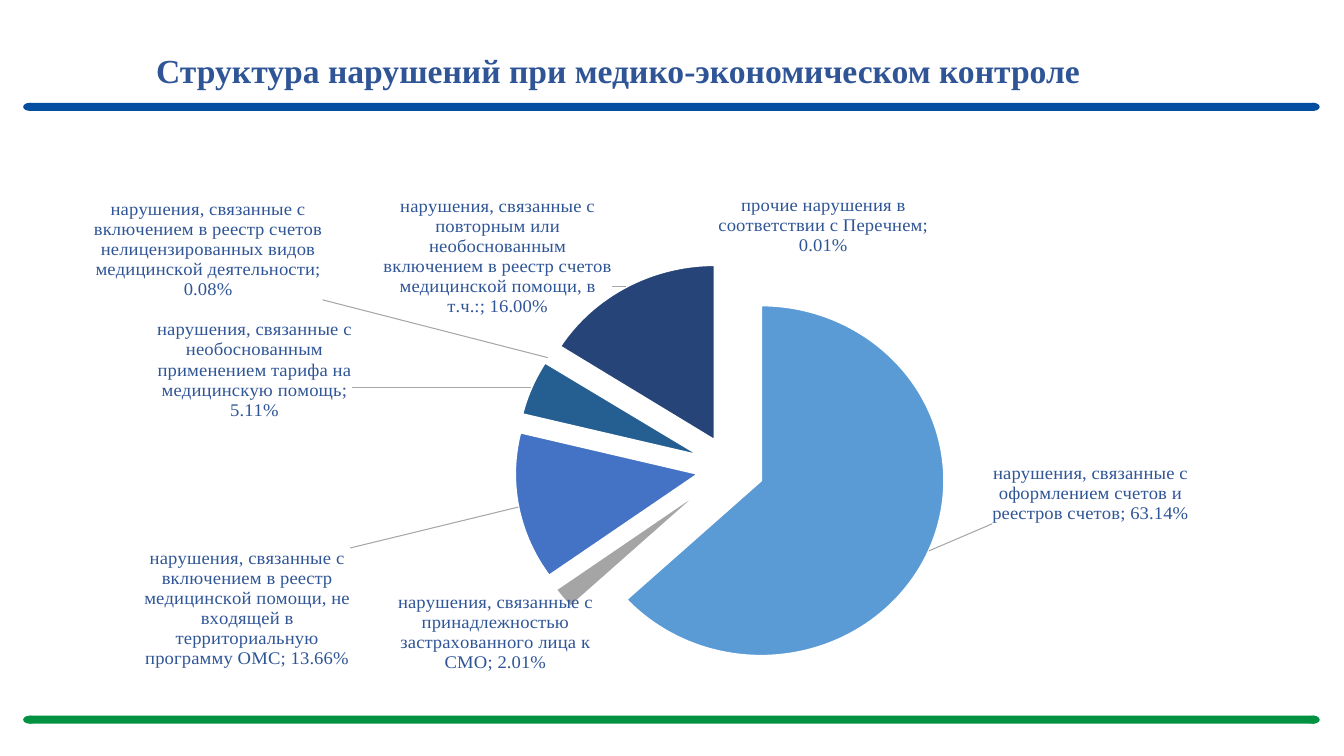
from dataclasses import dataclass

from lxml import etree
from pptx import Presentation
from pptx.chart.chart import Chart
from pptx.chart.data import CategoryChartData
from pptx.dml.color import RGBColor
from pptx.enum.chart import XL_CHART_TYPE, XL_LABEL_POSITION
from pptx.enum.shapes import MSO_SHAPE
from pptx.enum.text import MSO_ANCHOR, PP_ALIGN
from pptx.oxml import parse_xml
from pptx.oxml.ns import nsdecls, qn
from pptx.slide import Slide
from pptx.util import Inches, Pt

PIE = XL_CHART_TYPE.PIE
OUTSIDE_END = XL_LABEL_POSITION.OUTSIDE_END
RECTANGLE = MSO_SHAPE.RECTANGLE
OVAL = MSO_SHAPE.OVAL
BOTTOM = MSO_ANCHOR.BOTTOM
CENTER = PP_ALIGN.CENTER

WHITE = RGBColor(0xFF, 0xFF, 0xFF)
BLACK = RGBColor(0x00, 0x00, 0x00)
TEXT_BLUE = RGBColor(0x2F, 0x55, 0x97)
RULE_BLUE = RGBColor(0x03, 0x4E, 0xA1)
RULE_GREEN = RGBColor(0x00, 0x92, 0x40)
LEADER_GRAY = RGBColor(0xA6, 0xA6, 0xA6)
SERIF = "Times New Roman"
EXPLOSION = 18


@dataclass
class Violation:
    """One slice; label_x and label_y shift its label by fractions of the chart."""

    name: str
    share: float
    color: RGBColor
    label_x: float
    label_y: float


VIOLATIONS = [
    Violation("нарушения, связанные с оформлением счетов и реестров счетов",
              0.6314, RGBColor(0x5B, 0x9B, 0xD5), 0.05, -0.18),
    Violation("нарушения, связанные с принадлежностью застрахованного лица к СМО",
              0.0201, RGBColor(0xA5, 0xA5, 0xA5), 0.03, -0.02),
    Violation("нарушения, связанные с включением в реестр медицинской помощи, "
              "не входящей в территориальную программу ОМС",
              0.1366, RGBColor(0x44, 0x72, 0xC4), -0.14, 0.08),
    Violation("нарушения, связанные с необоснованным применением тарифа "
              "на медицинскую помощь",
              0.0511, RGBColor(0x25, 0x5E, 0x91), -0.15, 0.07),
    Violation("нарушения, связанные с включением в реестр счетов "
              "нелицензированных видов медицинской деятельности",
              0.0008, RGBColor(0x63, 0x63, 0x63), -0.19, -0.11),
    Violation("нарушения, связанные с повторным или необоснованным включением "
              "в реестр счетов медицинской помощи, в т.ч.:",
              0.16, RGBColor(0x26, 0x44, 0x78), -0.01, 0.07),
    Violation("прочие нарушения в соответствии с Перечнем",
              0.0001, RGBColor(0x7C, 0xAF, 0xDD), 0.08, 0),
]


def add_rounded_rule(slide: Slide, top: float, color: RGBColor) -> None:
    parts = [(RECTANGLE, 0.29, 12.75), (OVAL, 0.23, 0.13), (OVAL, 12.96, 0.13)]
    for preset, left, width in parts:
        shape = slide.shapes.add_shape(
            preset, Inches(left), Inches(top), Inches(width), Inches(0.08))
        shape.shadow.inherit = False
        shape.fill.solid()
        shape.fill.fore_color.rgb = color
        shape.line.fill.background()


def format_title(slide: Slide) -> None:
    title = slide.shapes.title
    title.left, title.top = Inches(0.49), Inches(0.13)
    title.width, title.height = Inches(11.28), Inches(0.82)
    text_frame = title.text_frame
    text_frame.text = "Структура нарушений при медико-экономическом контроле"
    text_frame.vertical_anchor = BOTTOM
    text_frame.word_wrap = True
    paragraph = text_frame.paragraphs[0]
    paragraph.alignment = CENTER
    paragraph.line_spacing = 0.9
    font = paragraph.runs[0].font
    font.name, font.size, font.bold = SERIF, Pt(24), True
    font.color.rgb = TEXT_BLUE


def manual_layout(**values: float | str) -> etree._Element:
    settings = "".join(f'<c:{tag} val="{value}"/>' for tag, value in values.items())
    return parse_xml(f'<c:layout {nsdecls("c")}><c:manualLayout>{settings}'
                     "</c:manualLayout></c:layout>")


def replace_layout(parent: etree._Element, layout: etree._Element, index: int) -> None:
    for old_layout in parent.findall(qn("c:layout")):
        parent.remove(old_layout)
    parent.insert(index, layout)


def add_leader_lines(labels: etree._Element) -> None:
    for tag in ("c:showLeaderLines", "c:leaderLines"):
        for element in labels.findall(qn(tag)):
            labels.remove(element)
    labels.append(parse_xml(f'<c:showLeaderLines {nsdecls("c")} val="1"/>'))
    labels.append(parse_xml(
        f'<c:leaderLines {nsdecls("c", "a")}><c:spPr><a:ln w="9525"><a:solidFill>'
        f'<a:srgbClr val="{LEADER_GRAY}"/></a:solidFill></a:ln></c:spPr>'
        "</c:leaderLines>"))


def format_slices(chart: Chart) -> None:
    plot = chart.plots[0]
    plot.vary_by_categories = True
    series = plot.series[0]
    series.data_labels.show_value = True
    series.data_labels.show_category_name = True
    series.data_labels.number_format = "0.00%"
    series.data_labels.number_format_is_linked = False
    series.data_labels.position = OUTSIDE_END
    for index, violation in enumerate(VIOLATIONS):
        point = series.points[index]
        point.format.fill.solid()
        point.format.fill.fore_color.rgb = violation.color
        point.format.line.color.rgb = WHITE
        point.format.line.width = Pt(1.5)
        text_frame = point.data_label.text_frame
        text_frame.text = f"{violation.name}; {violation.share:.2%}"
        text_frame.word_wrap = True
        font = text_frame.paragraphs[0].runs[0].font
        font.name, font.size, font.bold = SERIF, Pt(13.3), False
        font.color.rgb = TEXT_BLUE
        point.data_label.position = OUTSIDE_END

    first_point = chart.element.find(".//" + qn("c:dPt"))
    first_point.addprevious(
        parse_xml(f'<c:explosion {nsdecls("c")} val="{EXPLOSION}"/>'))
    for label, violation in zip(chart.element.iter(qn("c:dLbl")), VIOLATIONS):
        replace_layout(
            label, manual_layout(x=violation.label_x, y=violation.label_y), 1)
    add_leader_lines(chart.element.find(".//" + qn("c:ser") + "/" + qn("c:dLbls")))


def add_violations_chart(slide: Slide) -> None:
    chart_data = CategoryChartData(number_format="0.00%")
    chart_data.categories = [violation.name for violation in VIOLATIONS]
    chart_data.add_series("Series 1", [violation.share for violation in VIOLATIONS])
    chart = slide.shapes.add_chart(
        PIE, Inches(0.9), Inches(1.6), Inches(11.5), Inches(5.17), chart_data).chart
    chart.has_title = False
    chart.has_legend = False
    chart.font.name, chart.font.size = "Calibri", Pt(10)
    chart.font.color.rgb = BLACK
    format_slices(chart)
    plot_layout = manual_layout(layoutTarget="inner", xMode="edge", yMode="edge",
                                x=0.33, y=0.17, w=0.444, h=0.83)
    replace_layout(chart.element.find(".//" + qn("c:plotArea")), plot_layout, 0)


def main() -> None:
    presentation = Presentation()
    presentation.slide_width = Inches(13.33)
    presentation.slide_height = Inches(7.5)
    title_only = presentation.slide_layouts[5]
    slide = presentation.slides.add_slide(title_only)
    add_rounded_rule(slide, 1.02, RULE_BLUE)
    add_rounded_rule(slide, 7.1, RULE_GREEN)
    format_title(slide)
    add_violations_chart(slide)
    presentation.save("out.pptx")


if __name__ == "__main__":
    main()
